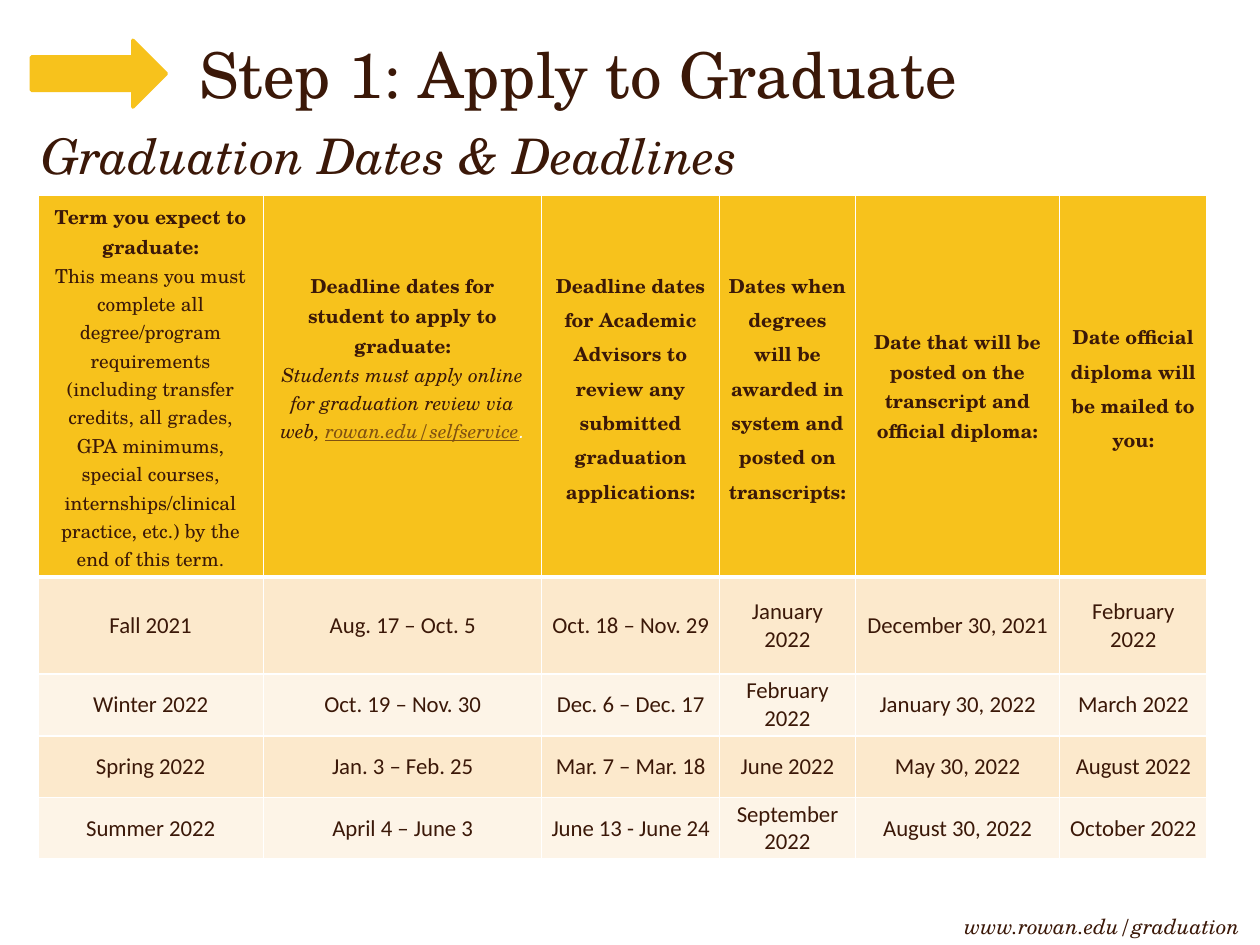
from lxml import etree
from pptx import Presentation
from pptx.dml.color import RGBColor
from pptx.enum.shapes import MSO_SHAPE
from pptx.enum.text import MSO_ANCHOR, PP_ALIGN
from pptx.oxml.ns import qn
from pptx.util import Inches, Pt

CENTER, LEFT, RIGHT = PP_ALIGN.CENTER, PP_ALIGN.LEFT, PP_ALIGN.RIGHT
TOP, MIDDLE = MSO_ANCHOR.TOP, MSO_ANCHOR.MIDDLE
RIGHT_ARROW = MSO_SHAPE.RIGHT_ARROW
SERIF, SANS = "TeX Gyre Schola", "Calibri"
COLORS = {"brown": "3B1808", "gold": "F7C21C", "link": "7F5111",
          "white": "FFFFFF", "peach": "FCE9CC", "cream": "FDF4E7"}


def add_run(paragraph, text, size, font=SERIF, color="brown", bold=False, italic=False):
    run = paragraph.add_run()
    run.text = text
    run.font.name, run.font.size = font, Pt(size)
    run.font.bold, run.font.italic = bold, italic
    run.font.color.rgb = RGBColor.from_string(COLORS[color])
    return run


def add_border(cell, side, points):
    line = etree.SubElement(cell._tc.get_or_add_tcPr(), qn("a:" + side), w=str(Pt(points)))
    fill = etree.SubElement(line, qn("a:solidFill"))
    etree.SubElement(fill, qn("a:srgbClr"), val=COLORS["white"])


prs = Presentation()
prs.slide_width, prs.slide_height = Inches(10), Inches(7.5)
slide = prs.slides.add_slide(prs.slide_layouts[6])

headings = [
    ("www.rowan.edu/graduation", 6.92, 7.25, 2.92, 0.25, 12, True, RIGHT, TOP),
    ("Step 1: Apply to Graduate", 1.58, 0.25, 8.17, 0.67, 36, False, LEFT, MIDDLE),
    ("Graduation Dates & Deadlines", 0.33, 1, 9.42, 0.54, 28, True, LEFT, TOP),
]
for text, left, top, width, height, size, italic, align, anchor in headings:
    frame = slide.shapes.add_textbox(
        Inches(left), Inches(top), Inches(width), Inches(height)).text_frame
    frame.word_wrap = True
    frame.vertical_anchor = anchor
    frame.margin_left = frame.margin_right = frame.margin_top = frame.margin_bottom = 0
    frame.paragraphs[0].alignment = align
    add_run(frame.paragraphs[0], text, size, italic=italic)

header = [
    "Term you expect to graduate:",
    "Deadline dates for student to apply to graduate:",
    "Deadline dates for Academic Advisors to review any submitted graduation applications:",
    "Dates when degrees will be awarded in system and posted on transcripts:",
    "Date that will be posted on the transcript and official diploma:",
    "Date official diploma will be mailed to you:",
]
terms = [
    ["Fall 2021", "Aug. 17 – Oct. 5", "Oct. 18 – Nov. 29", "January 2022",
     "December 30, 2021", "February 2022"],
    ["Winter 2022", "Oct. 19 – Nov. 30", "Dec. 6 – Dec. 17", "February 2022",
     "January 30, 2022", "March 2022"],
    ["Spring 2022", "Jan. 3 – Feb. 25", "Mar. 7 – Mar. 18", "June 2022",
     "May 30, 2022", "August 2022"],
    ["Summer 2022", "April 4 – June 3", "June 13 - June 24", "September 2022",
     "August 30, 2022", "October 2022"],
]
column_widths = [1.79, 2.21, 1.41, 1.08, 1.62, 1.17]
row_heights = [3.03, 0.77, 0.49, 0.49, 0.49]
deadlines = slide.shapes.add_table(
    len(row_heights), len(column_widths), Inches(0.3), Inches(1.55),
    Inches(sum(column_widths)), Inches(sum(row_heights))).table
for column, width in zip(deadlines.columns, column_widths):
    column.width = Inches(width)
for row, height in zip(deadlines.rows, row_heights):
    row.height = Inches(height)

for r, texts in enumerate([header] + terms):
    for c, text in enumerate(texts):
        cell = deadlines.cell(r, c)
        cell.margin_left = cell.margin_right = Inches(0.07)
        cell.margin_top = cell.margin_bottom = 0
        cell.vertical_anchor = MIDDLE
        for side in ("lnL", "lnR", "lnT", "lnB"):
            under_header = (r, side) in ((0, "lnB"), (1, "lnT"))
            add_border(cell, side, 3 if under_header else 1)
        cell.fill.solid()
        fill = "gold" if r == 0 else ("cream", "peach")[r % 2]
        cell.fill.fore_color.rgb = RGBColor.from_string(COLORS[fill])
        paragraph = cell.text_frame.paragraphs[0]
        paragraph.alignment = CENTER
        if r == 0:
            add_run(paragraph, text, 11, bold=True)
            if c in (2, 3, 5):
                paragraph.line_spacing = 1.15
        else:
            add_run(paragraph, text, 13, SANS)

details = []
for c, top_margin in enumerate((0.05, 0.6)):
    cell = deadlines.cell(0, c)
    cell.vertical_anchor = TOP
    cell.margin_left = cell.margin_right = Inches(0.1)
    cell.margin_top, cell.margin_bottom = Inches(top_margin), Inches(0.05)
    detail = cell.text_frame.add_paragraph()
    detail.alignment = CENTER
    details.append(detail)
term_detail, student_detail = details
add_run(term_detail, "This means you must complete all degree/program requirements "
        "(including transfer credits, all grades, GPA minimums, special courses, "
        "internships/clinical practice, etc.) by the end of this term.", 11)
add_run(student_detail, "Students must apply online for graduation review via web, ", 11,
        italic=True)
address = add_run(student_detail, "rowan.edu/selfservice", 11, color="link", italic=True)
address.font.underline = True
add_run(student_detail, ".", 11, "Arial", "white", italic=True)

arrow = slide.shapes.add_shape(
    RIGHT_ARROW, Inches(0.25), Inches(0.32), Inches(1.07), Inches(0.53))
arrow.shadow.inherit = False
arrow.fill.solid()
arrow.fill.fore_color.rgb = RGBColor.from_string(COLORS["gold"])
arrow.line.color.rgb = RGBColor.from_string(COLORS["gold"])
arrow.line.width = Pt(2)

prs.save("out.pptx")
